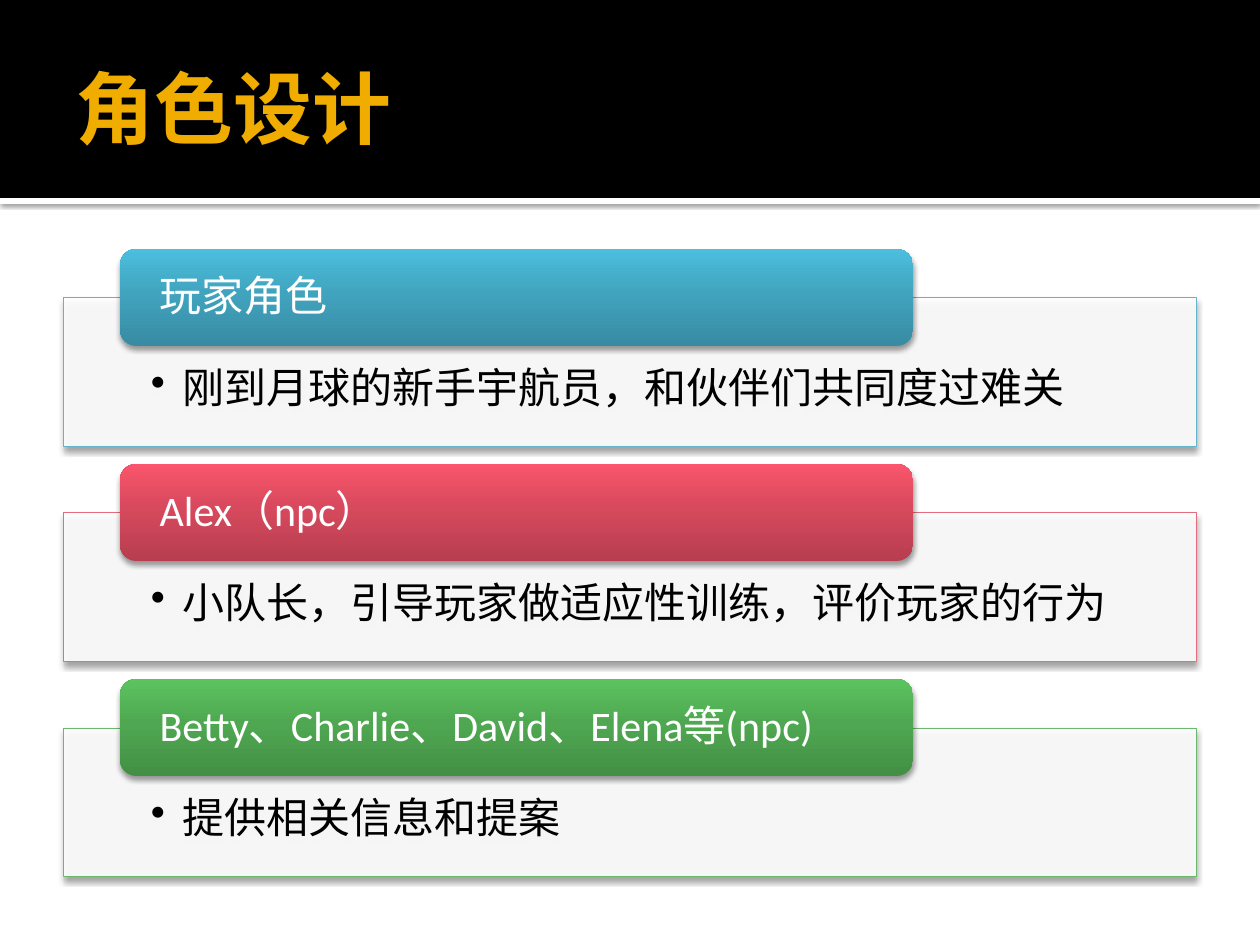
from lxml import etree
from pptx import Presentation
from pptx import util as u
from pptx.dml.color import RGBColor
from pptx.enum import shapes, text
from pptx.oxml.ns import qn

PX = 914400 / 126
HEX = {"black": "000000", "white": "FFFFFF", "gold": "F0AD00"}
FONT = "Calibri"
# heading, detail, edge colour, gradient from bottom to top
ROLES = [
    ("玩家角色", "刚到月球的新手宇航员，和伙伴们共同度过难关",
     "60B5CC", ("378BA2", "41A4BF", "4BBFDE")),
    ("Alex（npc）", "小队长，引导玩家做适应性训练，评价玩家的行为",
     "E66C7D", ("B73E4F", "D7495D", "FA556C")),
    ("Betty、Charlie、David、Elena等(npc)", "提供相关信息和提案",
     "6BB76D", ("438F45", "4FA851", "5CC35F")),
]


def px(n):
    return u.Emu(round(n * PX))


def rgb(code):
    return RGBColor.from_string(code)


def sub(node, tag, **attrs):
    return etree.SubElement(node, qn(tag), {k: str(v) for k, v in attrs.items()})


def shade(shape, alpha, blur, dist):
    """Give a downward black shadow; lengths in points, alpha in percent."""
    shape.shadow.inherit = False
    effects = shape._element.spPr.find(qn("a:effectLst"))
    drop = sub(effects, "a:outerShdw", blurRad=u.Pt(blur), dist=u.Pt(dist),
               dir=5400000, algn="t", rotWithShape=0)
    color = sub(drop, "a:srgbClr", val=HEX["black"])
    sub(color, "a:alpha", val=alpha * 1000)


def block(slide, kind, box, color=None):
    shape = slide.shapes.add_shape(kind, *map(px, box))
    shape.shadow.inherit = False
    shape.line.fill.background()
    if color:
        shape.fill.solid()
        shape.fill.fore_color.rgb = rgb(color)
    return shape


def blend(shape, colors):
    """Fill with a three-stop gradient rising from the bottom."""
    shape.fill.gradient()
    shape.fill.gradient_angle = 90
    stops = shape._element.spPr.find(".//" + qn("a:gsLst"))
    for stop in list(stops):
        stops.remove(stop)
    for pos, color in zip((0, 55, 100), colors):
        sub(sub(stops, "a:gs", pos=pos * 1000), "a:srgbClr", val=color)


def write(shape, words, size, color, pads, anchor, bold=False):
    frame = shape.text_frame
    frame.text = words
    frame.word_wrap = True
    frame.auto_size = text.MSO_AUTO_SIZE.NONE
    frame.vertical_anchor = anchor
    (frame.margin_left, frame.margin_top,
     frame.margin_right, frame.margin_bottom) = map(px, pads)
    para = frame.paragraphs[0]
    para.alignment = text.PP_ALIGN.LEFT
    font = para.runs[0].font
    font.name, font.size, font.bold = FONT, u.Pt(size), bold
    font.color.rgb = rgb(color)
    return para


def banner(slide, box, words):
    x, y, w, h = box
    rect = shapes.MSO_SHAPE.RECTANGLE
    rule = block(slide, rect, (x, y + h, w, 6), HEX["white"])
    shade(rule, 60, 2.5, 0.8)
    block(slide, rect, box, HEX["black"])
    title = slide.shapes.title
    slide.shapes._spTree.append(title._element)  # in front of the band
    title.left, title.top, title.width, title.height = map(
        px, (x + 63, y + 21, w - 126, 173))
    write(title, words, 45, HEX["gold"], (13, 6, 6, 6),
          text.MSO_ANCHOR.MIDDLE, True)


def card(slide, box, head, detail, edge, colors):
    """Place a bordered panel with a heading tab across its top edge."""
    x, y, w, h = box
    tab_h = 97
    drop = tab_h // 2 + 1
    panel = block(slide, shapes.MSO_SHAPE.RECTANGLE,
                  (x, y + drop, w, h - drop), HEX["white"])
    sub(panel._element.spPr.find(".//" + qn("a:srgbClr")), "a:alpha", val=90000)
    panel.line.color.rgb = rgb(edge)
    panel.line.width = u.Pt(0.5)
    shade(panel, 38, 3.1, 2)
    para = write(panel, detail, 24, HEX["black"], (88, 69, 88, 24),
                 text.MSO_ANCHOR.TOP)
    para.line_spacing = 0.9
    props = para._p.get_or_add_pPr()
    props.set("marL", str(u.Inches(0.25)))
    props.set("indent", str(-u.Inches(0.25)))
    sub(props, "a:buChar", char="•")

    tab = block(slide, shapes.MSO_SHAPE.ROUNDED_RECTANGLE,
                (x + 57, y, w * 7 // 10, tab_h))
    blend(tab, colors)
    shade(tab, 38, 3.1, 2)
    para = write(tab, head, 24, HEX["white"], (35, 5, 35, 5),
                 text.MSO_ANCHOR.MIDDLE)
    para.line_spacing = 0.9


def main():
    deck = Presentation()
    deck.slide_width, deck.slide_height = px(1260), px(945)
    slide = deck.slides.add_slide(deck.slide_layouts[5])
    banner(slide, (0, 0, 1260, 198), "角色设计")
    for i, role in enumerate(ROLES):
        card(slide, (63, 249 + i * 215, 1134, 198), *role)
    deck.save("out.pptx")


if __name__ == "__main__":
    main()
